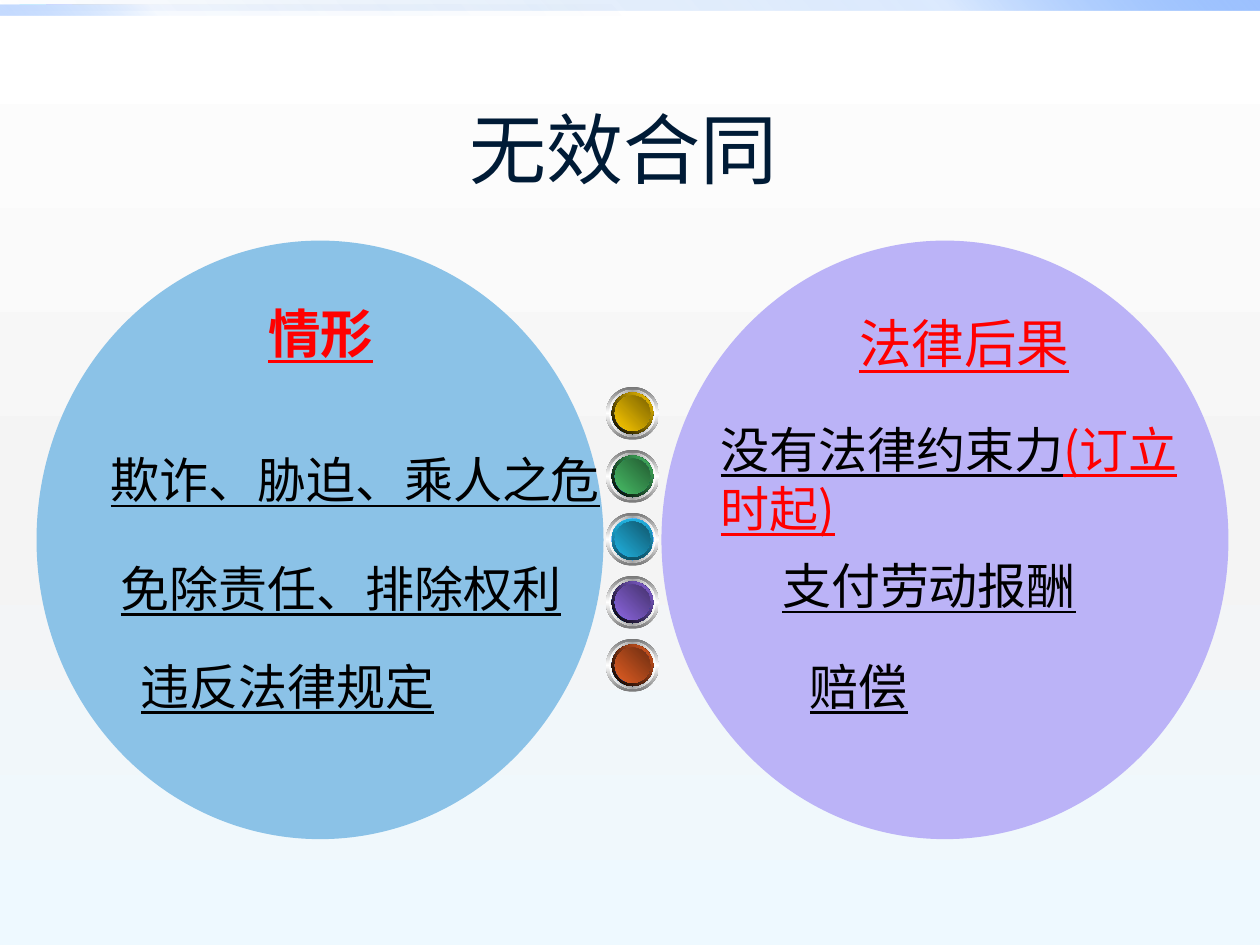
import pptx
import pptx.dml.color
import pptx.enum.shapes
import pptx.enum.text
import pptx.oxml.ns
import pptx.util
from lxml import etree

Inches = pptx.util.Inches
Pt = pptx.util.Pt
RGB = pptx.dml.color.RGBColor.from_string
KIND = pptx.enum.shapes.MSO_SHAPE
qn = pptx.oxml.ns.qn

FONT = "Noto Sans CJK SC"
COLORS = {
    "title": "001B36", "text": "000000", "red": "FF0000",
    "blue": "8BC2E7", "violet": "BBB3F7",
    "white": "FFFFFF", "black": "000000", "pale": "F4F4F4", "ice": "EEF9FF",
    "navy": "0058B7", "sky": "4F95FF", "haze": "9EC2FF",
    "steel": "767676", "gray": "A2A2A2", "azure": "0080FF", "slate": "53538A",
}
# Bright and dark shade of each button
BUTTONS = [("FFCC00", "7C6300"), ("48BE67", "235C32"), ("21B3E1", "10576D"),
           ("8D67E1", "45326D"), ("E35E23", "6E2E11")]


def blend(fill, root, stops, angle):
    """Fill with (position, colour, opacity) stops; angle runs clockwise."""
    fill.gradient()
    grad = root.find(".//" + qn("a:gradFill"))
    for child in list(grad):
        grad.remove(child)
    items = etree.SubElement(grad, qn("a:gsLst"))
    for pos, color, alpha in stops:
        stop = etree.SubElement(items, qn("a:gs"), pos=str(pos * 1000))
        tint = etree.SubElement(stop, qn("a:srgbClr"), val=color)
        if alpha < 100:
            etree.SubElement(tint, qn("a:alpha"), val=str(alpha * 1000))
    etree.SubElement(grad, qn("a:lin"), ang=str(angle * 60000), scaled="0")


def shape(parent, kind, box):
    item = parent.shapes.add_shape(kind, *map(Inches, box))
    item.shadow.inherit = False
    item.line.fill.background()
    return item


def bar(slide, box, stops, angle):
    item = shape(slide, KIND.RECTANGLE, box)
    blend(item.fill, item.element, stops, angle)


def disc(slide, left, color):
    item = shape(slide, KIND.OVAL, (left, 1.91, 4.5, 4.75))
    item.fill.solid()
    item.fill.fore_color.rgb = RGB(COLORS[color])


def write(para, text, size, color, font=FONT, bold=False, line=True):
    run = para.add_run()
    run.text = text
    run.font.name = font
    run.font.size = Pt(size)
    run.font.bold = bold
    run.font.underline = line
    run.font.color.rgb = RGB(COLORS[color])
    east = etree.Element(qn("a:ea"), typeface=font)
    run.font.fill  # the fill comes before the typefaces
    run.element.rPr if hasattr(run, "element") else None
    para.runs[-1].font.language_id = None
    latin = para.runs[-1]._r.find(".//" + qn("a:latin"))
    latin.addnext(east)


def label(slide, box, runs, size=28, bold=False, wrap=False):
    frame = slide.shapes.add_textbox(*map(Inches, box)).text_frame
    frame.word_wrap = wrap
    frame.auto_size = pptx.enum.text.MSO_AUTO_SIZE.SHAPE_TO_FIT_TEXT
    for text, color in runs:
        write(frame.paragraphs[0], text, size, color, bold=bold)


def button(slide, mid, bright, dark, rim):
    """Stack concentric rings around one centre."""
    c = COLORS
    group = slide.shapes.add_group_shape()
    rings = [
        (0.42, (c["steel"], c["white"], c["steel"]), 90),
        (0.37, (c["white"], c["gray"], c["white"]), 0),
        (0.33, (c["azure"], c["white"], c["azure"]), 315),
        (0.33, *rim),
        (0.28, (c["azure"], c["slate"], c["azure"]), 45),
        (0.28, (bright, dark), 315),
    ]
    for size, tints, angle in rings:
        box = (5.02 - size / 2, mid - size / 2, size, size)
        item = shape(group, KIND.OVAL, box)
        step = 100 // (len(tints) - 1)
        stops = [(i * step, tint, 100) for i, tint in enumerate(tints)]
        blend(item.fill, item.element, stops, angle)


def head(slide, text):
    title = slide.shapes.title
    title.left, title.top = Inches(0.45), Inches(0.55)
    title.width, title.height = Inches(9), Inches(1.25)
    frame = title.text_frame
    frame.vertical_anchor = pptx.enum.text.MSO_ANCHOR.MIDDLE
    para = frame.paragraphs[0]
    para.alignment = pptx.enum.text.PP_ALIGN.CENTER
    write(para, text, 44, "title", font="Roboto", line=False)


def main():
    deck = pptx.Presentation()
    deck.slide_width, deck.slide_height = Inches(10), Inches(7.5)
    slide = deck.slides.add_slide(deck.slide_layouts[5])
    c = COLORS

    # Background and top bars
    blend(slide.background.fill, slide.element,
          [(0, c["white"], 100), (55, c["pale"], 100), (100, c["ice"], 100)], 90)
    bar(slide, (0, 0, 10, 0.08),
        [(0, c["navy"], 0), (75, c["sky"], 20), (100, c["haze"], 100)], 315)
    bar(slide, (0, 0.04, 5, 0.08),
        [(0, c["navy"], 0), (75, c["sky"], 5), (100, c["haze"], 60)], 135)

    # Title and circles
    head(slide, "无效合同")
    disc(slide, 5.25, "violet")
    disc(slide, 0.29, "blue")

    # Right: consequences
    label(slide, (6.72, 2.42, 1.89, 0.61), [("法律后果", "red")], 30)
    label(slide, (5.62, 3.28, 3.91, 1.04),
          [("没有法律约束力", "text"), ("(订立时起)", "red")], wrap=True)
    label(slide, (6.11, 4.36, 2.56, 0.57), [("支付劳动报酬", "text")])
    label(slide, (6.33, 5.16, 0.99, 0.57), [("赔偿", "text")])

    # Left: situations
    label(slide, (2.03, 2.34, 1.05, 0.61), [("情形", "red")], 30, bold=True)
    label(slide, (0.78, 3.52, 4.13, 0.57), [("欺诈、胁迫、乘人之危", "text")])
    label(slide, (0.86, 4.38, 3.74, 0.57), [("免除责任、排除权利", "text")])
    label(slide, (1.02, 5.16, 2.56, 0.57), [("违反法律规定", "text")])

    # Column of buttons; the middle one has a lit rim
    for i, (bright, dark) in enumerate(BUTTONS):
        rim = ((c["black"], bright), 315)
        if i == 2:
            rim = ((bright, "0F5368"), 90)
        button(slide, 3.28 + i * 0.5, bright, dark, rim)

    deck.save("out.pptx")


if __name__ == "__main__":
    main()
